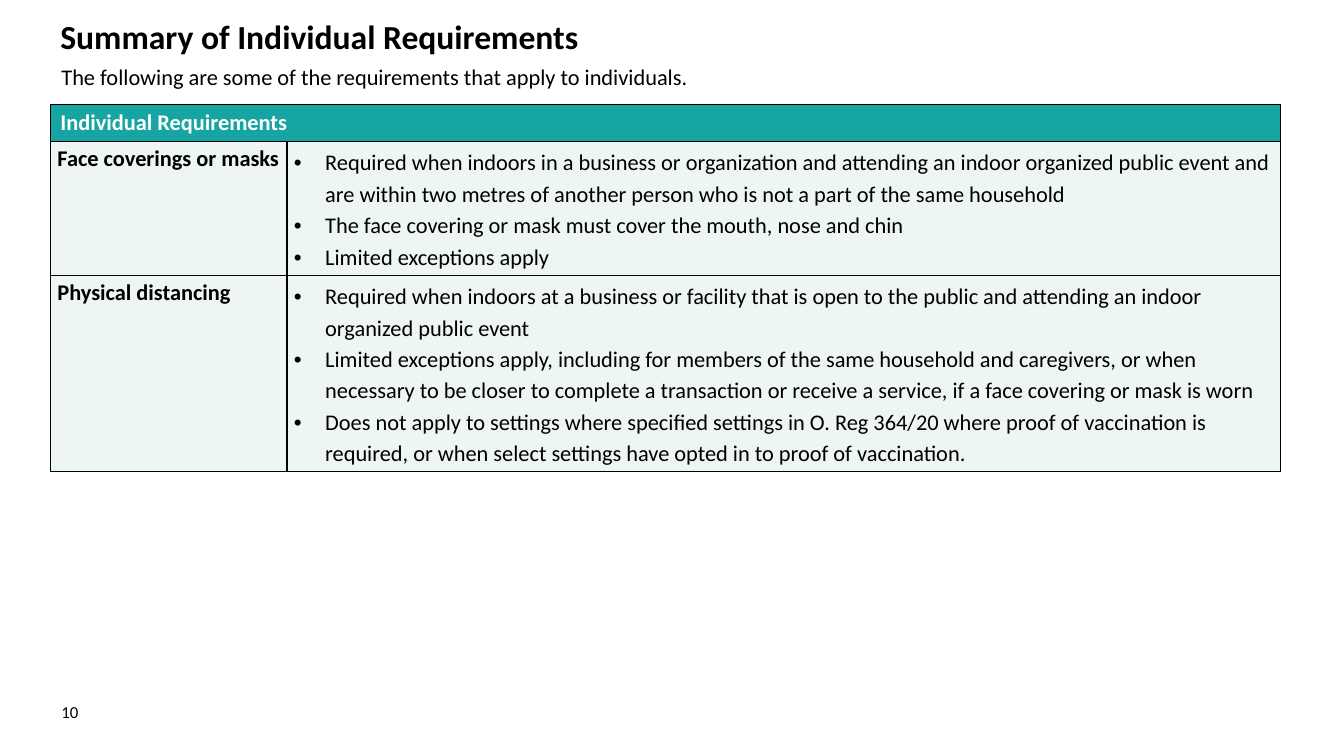
from lxml.etree import SubElement
from pptx import Presentation
from pptx.dml.color import RGBColor
from pptx.enum.text import MSO_ANCHOR
from pptx.oxml.ns import qn
from pptx.util import Inches, Pt

REQUIREMENTS = [
    ("Face coverings or masks", [
        "Required when indoors in a business or organization and attending an indoor organized public event and are within two metres of another person who is not a part of the same household",
        "The face covering or mask must cover the mouth, nose and chin",
        "Limited exceptions apply",
    ]),
    ("Physical distancing", [
        "Required when indoors at a business or facility that is open to the public and attending an indoor organized public event",
        "Limited exceptions apply, including for members of the same household and caregivers, or when necessary to be closer to complete a transaction or receive a service, if a face covering or mask is worn",
        "Does not apply to settings where specified settings in O. Reg 364/20 where proof of vaccination is required, or when select settings have opted in to proof of vaccination.",
    ]),
]


def rgb(value):
    return RGBColor.from_string(value)


def write(tf, text, size=16, color="000000", bold=False, font="Calibri",
          spacing=None, bullet=False):
    lines = [text] if isinstance(text, str) else text
    for i, line in enumerate(lines):
        p = tf.paragraphs[0] if i == 0 else tf.add_paragraph()
        if bullet:
            pPr = p._p.get_or_add_pPr()
            indent = Inches(0.31)
            pPr.set("marL", str(indent))
            pPr.set("indent", str(-indent))
            SubElement(pPr, qn("a:buFont"), typeface="Arial")
            SubElement(pPr, qn("a:buChar"), char="•")
        if spacing:
            p.line_spacing = spacing
        r = p.add_run()
        r.text = line
        r.font.name = font
        r.font.size = Pt(size)
        r.font.bold = bold
        r.font.color.rgb = rgb(color)


class SlideBuilder:
    header_fill = "16A5A3"
    body_fill = "EEF5F5"
    border = "000000"

    def __init__(self, prs):
        self.width, self.height = prs.slide_width, prs.slide_height
        self.s = prs.slides.add_slide(prs.slide_layouts[6])

    def x(self, percent):
        return round(self.width * percent / 100)

    def y(self, percent):
        return round(self.height * percent / 100)

    def text(self, left, top, width, height, text, anchor=MSO_ANCHOR.TOP, **style):
        sp = self.s.shapes.add_textbox(self.x(left), self.y(top),
                                       self.x(width), self.y(height))
        tf = sp.text_frame
        tf.word_wrap = True
        tf.vertical_anchor = anchor
        write(tf, text, **style)

    def cell(self, cell, fill):
        tcPr = cell._tc.get_or_add_tcPr()
        for side in ("a:lnL", "a:lnR", "a:lnT", "a:lnB"):
            ln = SubElement(tcPr, qn(side), w=str(Pt(1)))
            line_fill = SubElement(ln, qn("a:solidFill"))
            SubElement(line_fill, qn("a:srgbClr"), val=self.border)
        cell.fill.solid()
        cell.fill.fore_color.rgb = rgb(fill)

    def table(self, left, top, columns, rows, heading, entries):
        frame = self.s.shapes.add_table(
            len(rows), len(columns), self.x(left), self.y(top),
            self.x(sum(columns)), self.y(sum(rows)))
        table = frame.table
        table.first_row = table.horz_banding = False
        for column, width in zip(table.columns, columns):
            column.width = self.x(width)
        for i, (row, height) in enumerate(zip(table.rows, rows)):
            row.height = self.y(height)
            for cell in row.cells:
                self.cell(cell, self.body_fill if i else self.header_fill)
                if i:
                    cell.margin_left = cell.margin_right = Inches(0.07)
                    cell.margin_top = cell.margin_bottom = Inches(0.04)
        header = table.cell(0, 0)
        header.merge(table.cell(0, len(columns) - 1))
        write(header.text_frame, heading, color="FFFFFF", bold=True)
        for i, (name, rules) in enumerate(entries, 1):
            write(table.cell(i, 0).text_frame, name, bold=True)
            write(table.cell(i, 1).text_frame, rules, spacing=1.15, bullet=True)


def main():
    prs = Presentation()
    prs.slide_width, prs.slide_height = Inches(13.33), Inches(7.5)
    slide = SlideBuilder(prs)
    slide.text(3.75, 2, 94.67, 7.47, "Summary of Individual Requirements",
               size=24, bold=True, spacing=0.9)
    slide.text(3.83, 7.73, 92.5, 5.6,
               "The following are some of the requirements that apply to individuals.")
    slide.text(3.83, 91.47, 4.2, 5.33, "10", size=12, anchor=MSO_ANCHOR.MIDDLE)
    slide.table(3.75, 13.8, [17.6, 73.95], [4.9, 17.7, 26],
                "Individual Requirements", REQUIREMENTS)
    prs.save("out.pptx")


if __name__ == "__main__":
    main()
